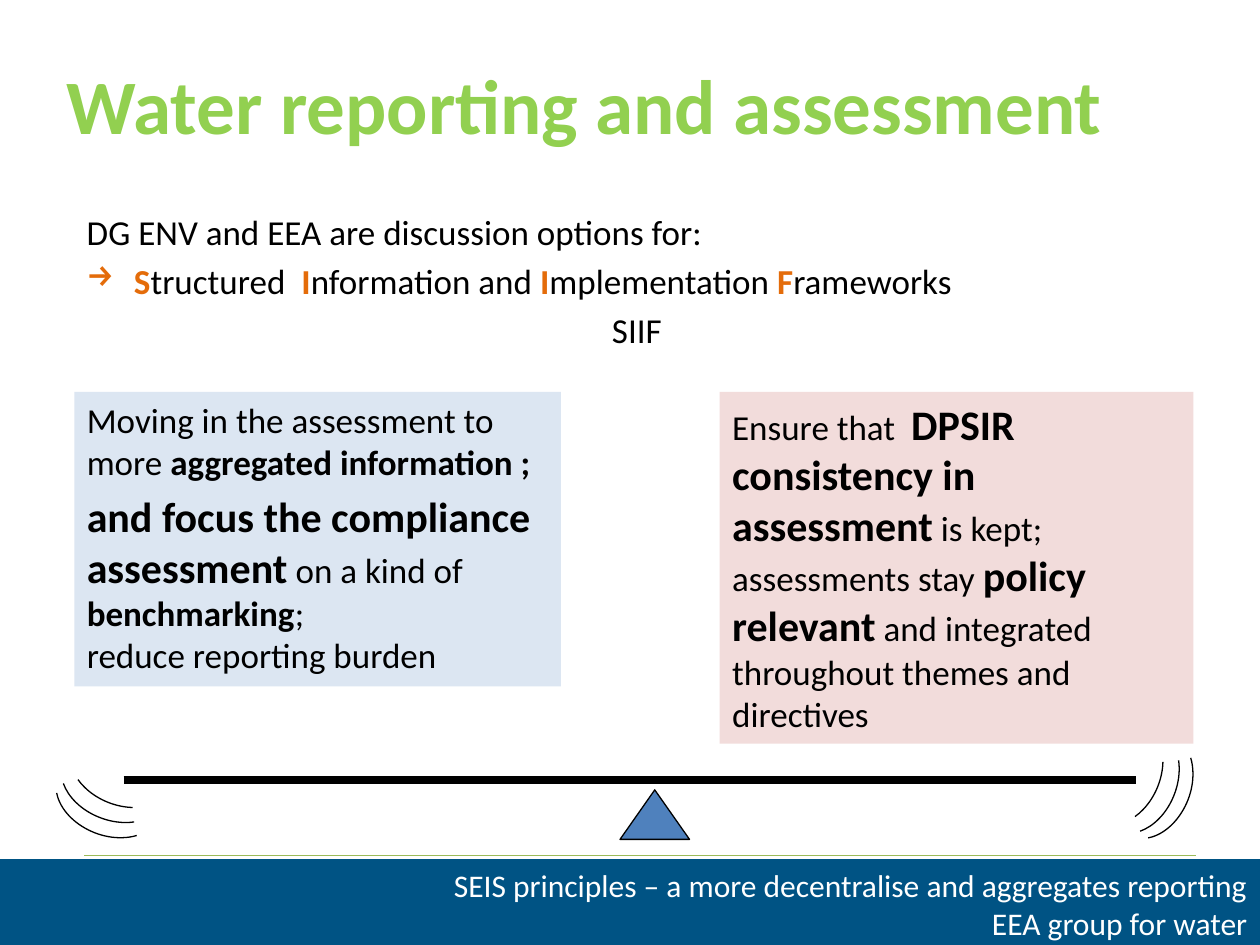
from lxml import etree
from pptx import Presentation
from pptx.dml.color import RGBColor
from pptx.enum.shapes import MSO_CONNECTOR, MSO_SHAPE
from pptx.enum.text import MSO_ANCHOR, MSO_AUTO_SIZE, PP_ALIGN
from pptx.oxml.ns import qn
from pptx.util import Pt

LEFT, CENTER, RIGHT = PP_ALIGN.LEFT, PP_ALIGN.CENTER, PP_ALIGN.RIGHT
MIDDLE, TOP = MSO_ANCHOR.MIDDLE, MSO_ANCHOR.TOP
FONT = "Calibri"
C = {"black": "000000", "white": "FFFFFF", "green": "92D050", "rule": "9BBB59",
     "bar": "005384", "orange": "E46C0A", "blue": "DCE6F2", "pink": "F2DCDB",
     "pivot": "4F81BD"}

# Run formats
PLAIN = {"size": 20, "color": "black", "bold": False}
BOLD = {**PLAIN, "bold": True}
BIG = {**BOLD, "size": 24}
INITIAL = {**BOLD, "color": "orange"}
HEADING = {"size": 44, "color": "green", "bold": True}
FOOTER = {"size": 18, "color": "white", "bold": False}

# Paragraph: (alignment, bullet, runs)
footer = [(RIGHT, None, [
    ("SEIS principles – a more decentralise and aggregates reporting\n"
     "EEA group for water", FOOTER)])]
heading = [(LEFT, None, [("Water reporting and assessment", HEADING)])]
intro = [
    (LEFT, None, [("DG ENV and EEA are discussion options for:", PLAIN)]),
    (LEFT, "→", [("S", INITIAL), ("tructured  ", PLAIN),
                 ("I", INITIAL), ("nformation and ", PLAIN),
                 ("I", INITIAL), ("mplementation ", PLAIN),
                 ("F", INITIAL), ("rameworks", PLAIN)]),
    (CENTER, None, [("SIIF", PLAIN)]),
]
aggregation = [
    (LEFT, None, [("Moving in the assessment to more ", PLAIN),
                  ("aggregated information ;", BOLD)]),
    (LEFT, None, [("and focus the compliance assessment", BIG),
                  (" on a kind of ", PLAIN), ("benchmarking", BOLD),
                  ("; \nreduce reporting burden", PLAIN)]),
]
consistency = [
    (LEFT, None, [("Ensure that  ", PLAIN),
                  ("DPSIR consistency in assessment", BIG),
                  (" is kept; assessments stay ", PLAIN),
                  ("policy relevant", BIG),
                  (" and integrated throughout themes and directives", PLAIN)]),
]

# Boxes: (left, top, width, height, fill, paragraphs)
boxes = [
    (42.5, 116.6, 643, 108, None, intro),
    (42.5, 224, 278, 168.3, "blue", aggregation),
    (411.3, 224, 270.7, 201, "pink", consistency),
    (31, 29.5, 666, 60.5, None, heading),
]

# Lines: (x1, x2, y, color, width)
lines = [(683.3, 48.2, 488.9, "rule", 1), (70.6, 649.4, 445.7, "black", 4.5)]

# Swing marks: start and end angles, shared by both beam ends
ARC_SIZE = (45.4, 62.6)
arc_angles = [(195.33, 30.68), (182.27, 42.99), (187.7, 39.15)]
# (rotation, left and top of each arc)
swings = [
    (111.4, [(47.5, 406.1), (39.6, 423.4), (42.5, 414.7)]),
    (21.4, [(617.8, 409.7), (635, 417.6), (627.1, 414.7)]),
]


def rgb(name):
    return RGBColor.from_string(C[name])


def write(tf, paragraphs, anchor=TOP):
    tf.word_wrap = True
    tf.auto_size = MSO_AUTO_SIZE.NONE
    tf.vertical_anchor = anchor
    for i, (align, bullet, runs) in enumerate(paragraphs):
        p = tf.paragraphs[0] if i == 0 else tf.add_paragraph()
        p.alignment = align
        p.space_before = Pt(0.2 * runs[0][1]["size"] if i else 0)
        if bullet:
            ppr = p._p.get_or_add_pPr()
            ppr.set("marL", str(Pt(27)))
            ppr.set("indent", str(-Pt(27)))
            etree.SubElement(ppr, qn("a:buChar")).set("char", bullet)
        for text, style in runs:
            for n, part in enumerate(text.split("\n")):
                if n:
                    p.add_line_break()
                r = p.add_run()
                r.text = part
                r.font.color.rgb = rgb(style["color"])
                values = {"name": FONT, "size": Pt(style["size"]),
                          "bold": style["bold"]}
                for key, value in values.items():
                    setattr(r.font, key, value)


def add_shape(s, kind, left, top, width, height, fill=None, line=None):
    sp = s.shapes.add_shape(kind, Pt(left), Pt(top), Pt(width), Pt(height))
    sp.shadow.inherit = False
    if fill:
        sp.fill.solid()
        sp.fill.fore_color.rgb = rgb(fill)
    else:
        sp.fill.background()
    if line:
        sp.line.color.rgb = rgb(line)
        sp.line.width = Pt(0.75)
    else:
        sp.line.fill.background()
    return sp


def add_line(s, x1, x2, y, color, width):
    cx = s.shapes.add_connector(MSO_CONNECTOR.STRAIGHT, Pt(x1), Pt(y), Pt(x2), Pt(y))
    cx.line.color.rgb = rgb(color)
    cx.line.width = Pt(width)
    etree.SubElement(cx._element.spPr, qn("a:effectLst"))


def main():
    prs = Presentation()
    prs.slide_width, prs.slide_height = Pt(720), Pt(540)
    s = prs.slides.add_slide(prs.slide_layouts[5])

    title = s.shapes.title
    title.left, title.top, title.width, title.height = Pt(0), Pt(491), Pt(720), Pt(51)
    title.fill.solid()
    title.fill.fore_color.rgb = rgb("bar")
    write(title.text_frame, footer, MIDDLE)

    for left, top, width, height, fill, paragraphs in boxes:
        if fill:
            box = add_shape(s, MSO_SHAPE.RECTANGLE, left, top, width, height, fill)
        else:
            box = s.shapes.add_textbox(Pt(left), Pt(top), Pt(width), Pt(height))
        write(box.text_frame, paragraphs)

    add_shape(s, MSO_SHAPE.ISOSCELES_TRIANGLE, 354.3, 451.4, 39.7, 28.3,
              "pivot", "black")
    for line in lines:
        add_line(s, *line)
    for rotation, corners in swings:
        for (left, top), angles in zip(corners, arc_angles):
            arc = add_shape(s, MSO_SHAPE.ARC, left, top, *ARC_SIZE, line="black")
            arc.rotation = rotation
            for i, angle in enumerate(angles):
                arc.adjustments[i] = angle

    prs.save("out.pptx")


if __name__ == "__main__":
    main()
